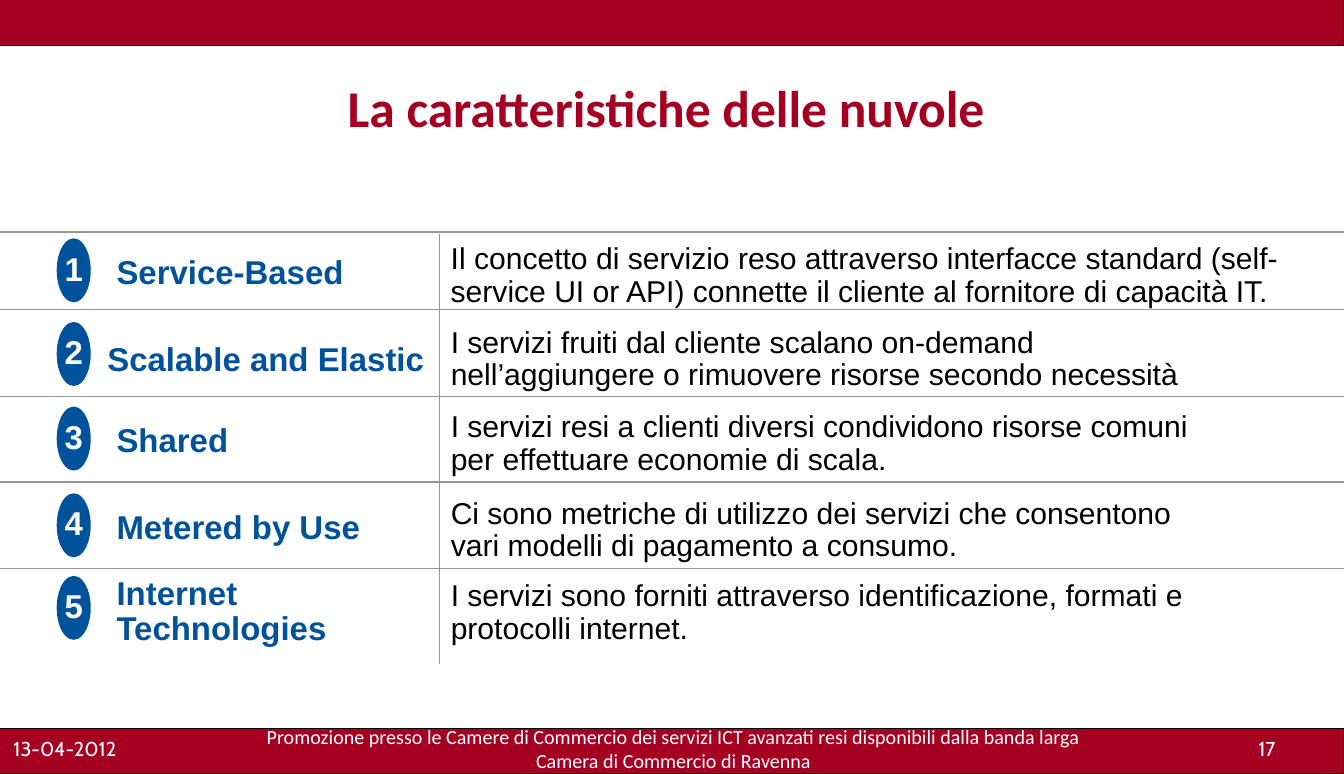
from pptx import Presentation
from pptx import util as u
from pptx.dml.color import RGBColor
from pptx.enum import shapes, text
from pptx.oxml.ns import qn
from lxml import etree

COLORS = {"red": "A50021", "blue": "00529B", "grey": "969696",
          "black": "000000", "white": "FFFFFF"}
WIDTH, HEIGHT = 13.03, 7.5
BAND_HEIGHT = 0.44
DIVIDER_X = 4.26
FEATURES = [
    (2.25, 2.31, (1.01, 2.42, 2.77), 8.93, "Service-Based",
     "Il concetto di servizio reso attraverso interfacce standard (self-service UI or API) "
     "connette il cliente al fornitore di capacità IT."),
    (3.0, 3.12, (0.92, 3.26, 3.39), 7.72, "Scalable and Elastic",
     "I servizi fruiti dal cliente scalano on-demand nell’aggiungere o rimuovere risorse "
     "secondo necessità"),
    (3.84, 3.94, (1.01, 4.05, 3.03), 7.72, "Shared",
     "I servizi resi a clienti diversi condividono risorse comuni per effettuare economie "
     "di scala."),
    (4.67, 4.78, (1.01, 4.89, 3.03), 7.72, "Metered by Use",
     "Ci sono metriche di utilizzo dei servizi che consentono vari modelli di pagamento "
     "a consumo."),
    (5.51, 5.58, (1.01, 5.53, 2.6), 7.72, "Internet Technologies",
     "I servizi sono forniti attraverso identificazione, formati e protocolli internet."),
]


def color(name):
    return RGBColor.from_string(COLORS[name])


class SlideBuilder:
    """Hold the style and the current slide, and add each kind of element."""

    def __init__(self, slide):
        self.slide = slide
        self.insets = (0.12, 0.06)

    def fill_text(self, frame, lines, size, font, ink, bold=False, align="LEFT",
                  spacing=None, insets=None, wrap=True, anchor="TOP"):
        side, end = insets or self.insets
        frame.margin_left = frame.margin_right = u.Inches(side)
        frame.margin_top = frame.margin_bottom = u.Inches(end)
        frame.auto_size = text.MSO_AUTO_SIZE.NONE
        frame.word_wrap = wrap
        frame.vertical_anchor = getattr(text.MSO_ANCHOR, anchor)
        for index, line in enumerate(lines):
            paragraph = frame.add_paragraph() if index else frame.paragraphs[0]
            paragraph.alignment = getattr(text.PP_ALIGN, align)
            if spacing:
                paragraph.line_spacing = spacing
            run = paragraph.add_run()
            run.text = line
            run.font.size, run.font.name, run.font.bold = u.Pt(size), font, bold
            run.font.color.rgb = color(ink)

    def title(self, box, line):
        title = self.slide.shapes.title
        title.left, title.top, title.width, title.height = map(u.Inches, box)
        self.fill_text(title.text_frame, [line], 36, "Calibri", "red", bold=True,
                       align="CENTER", anchor="MIDDLE")

    def label(self, box, lines, *style, **options):
        label = self.slide.shapes.add_textbox(*map(u.Inches, box))
        self.fill_text(label.text_frame, lines, *style, **options)

    def shape(self, kind, box, fill, outline=None):
        shape = self.slide.shapes.add_shape(kind, *map(u.Inches, box))
        shape.shadow.inherit = False
        shape.fill.solid()
        shape.fill.fore_color.rgb = color(fill)
        if outline:
            shape.line.color.rgb = color(outline)
            shape.line.width = u.Pt(0.75)
        else:
            shape.line.fill.background()
        return shape

    def band(self, top):
        self.shape(shapes.MSO_SHAPE.RECTANGLE, (0, top, WIDTH, BAND_HEIGHT), "red", "black")

    def badge(self, top, number):
        badge = self.shape(shapes.MSO_SHAPE.OVAL, (0.55, top, 0.33, 0.62), "blue")
        self.fill_text(badge.text_frame, [str(number)], 23, "Arial", "white", bold=True,
                       align="CENTER", spacing=0.9, insets=(0, 0), wrap=False,
                       anchor="MIDDLE")

    def rule(self, *ends):
        rule = self.slide.shapes.add_connector(shapes.MSO_CONNECTOR.STRAIGHT,
                                               *map(u.Inches, ends))
        rule.line.color.rgb = color("grey")
        rule.line.width = u.Pt(1)
        etree.SubElement(rule._element.spPr, qn("a:effectLst"))


def main():
    deck = Presentation()
    deck.slide_width, deck.slide_height = u.Inches(WIDTH), u.Inches(HEIGHT)
    page = SlideBuilder(deck.slides.add_slide(deck.slide_layouts[5]))

    page.band(0)
    page.band(HEIGHT - BAND_HEIGHT)
    page.title((0.6, 0.48, 11.72, 1.11), "La caratteristiche delle nuvole")
    page.label((2.28, 7.02, 8.5, 0.48),
               ["Promozione presso le Camere di Commercio dei servizi ICT avanzati resi "
                "disponibili dalla banda larga", "Camera di Commercio di Ravenna"],
               14, "Calibri", "white", align="CENTER", insets=(0, 0))
    for left, width, line in ((0.13, 1.19, "13-04-2012"), (12.2, 0.7, "17")):
        page.label((left, 7.14, width, 0.24), [line], 14, "Cabin", "white", insets=(0, 0))

    for number, feature in enumerate(FEATURES, 1):
        rule_y, top, (left, name_top, width), description_width, name, description = feature
        page.rule(0, rule_y, WIDTH, rule_y)
        page.badge(top, number)
        page.label((left, name_top, width, 0.47), [name], 23, "Arial", "blue",
                   bold=True, spacing=0.9)
        page.label((4.25, top - 0.01, description_width, 0.76), [description],
                   21, "Arial", "black", spacing=0.9)
    page.rule(DIVIDER_X, 2.27, DIVIDER_X, 6.43)

    deck.save("out.pptx")


if __name__ == "__main__":
    main()
